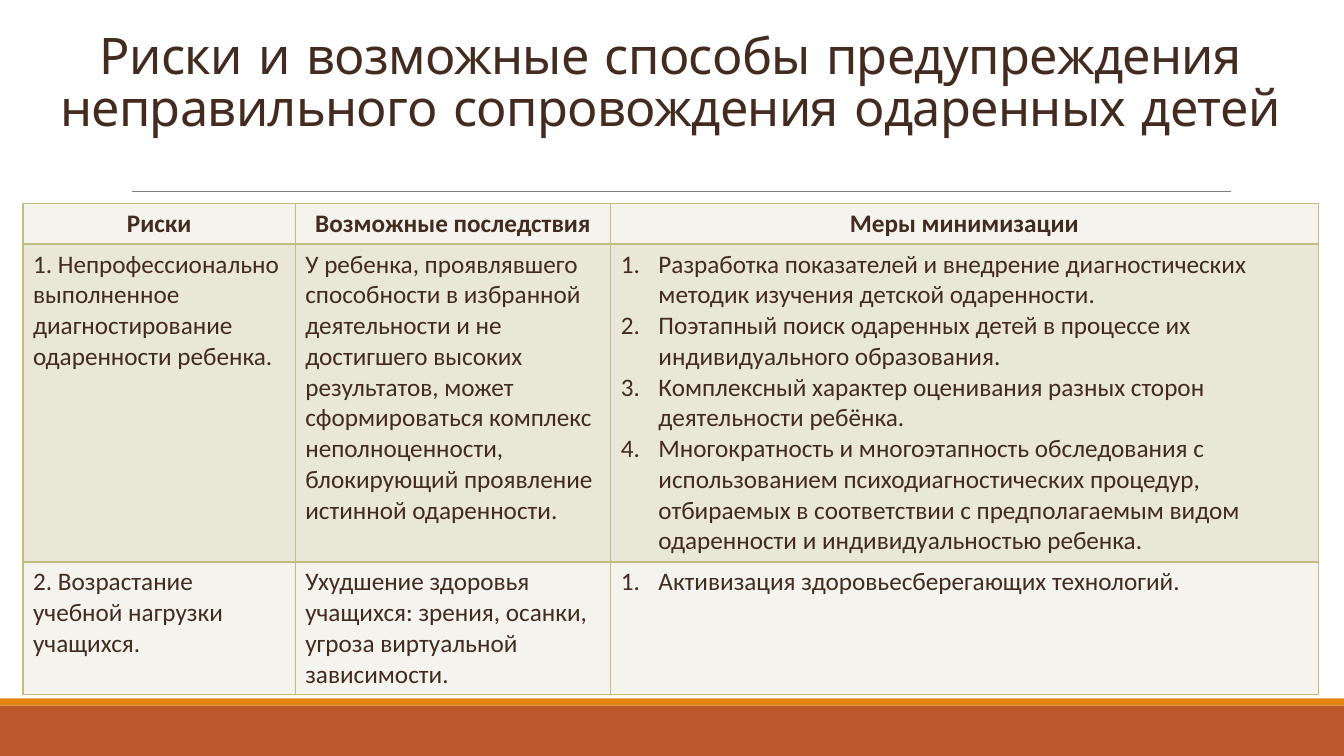
from dataclasses import dataclass

from lxml.etree import SubElement
from pptx import Presentation
from pptx.dml.color import RGBColor as RGB
from pptx.enum.shapes import MSO_CONNECTOR as Connector, MSO_SHAPE as Shape
from pptx.enum.text import MSO_ANCHOR as Anchor, PP_ALIGN as Align
from pptx.oxml.ns import qn
from pptx.util import Cm, Pt


@dataclass(frozen=True)
class Theme:
    """Colours, fonts and type sizes of the slide."""
    ink: str = "432B20"
    rule: str = "808080"
    footer: str = "BD582C"
    footer_edge: str = "E48312"
    border: str = "C2BC80"
    light_row: str = "F4F3ED"
    dark_row: str = "E9E7D8"
    title_font: str = "Comic Neue"
    body_font: str = "Calibri"
    title_size: int = 36
    body_size: int = 18


class SlideBuilder:
    """Draws styled elements on one slide."""

    def __init__(self, slide, theme):
        self.shapes = slide.shapes
        self.theme = theme

    def style_runs(self, paragraph, font, size, bold=False):
        """Apply typeface, size and ink colour to every run."""
        for run in paragraph.runs:
            run.font.name = font
            run.font.size = Pt(size)
            run.font.bold = bold
            run.font.color.rgb = RGB.from_string(self.theme.ink)

    def band(self, top, height, color):
        """Draw a full-width strip."""
        strip = self.shapes.add_shape(Shape.RECTANGLE, 0, Cm(top), Cm(33.87), Cm(height))
        strip.shadow.inherit = False
        strip.fill.solid()
        strip.fill.fore_color.rgb = RGB.from_string(color)
        strip.line.fill.background()

    def rule(self, left, right, top):
        """Draw a thin horizontal line."""
        line = self.shapes.add_connector(Connector.STRAIGHT, Cm(left), Cm(top), Cm(right), Cm(top))
        line.line.color.rgb = RGB.from_string(self.theme.rule)
        line.line.width = Pt(0.5)
        SubElement(line._element.spPr, qn("a:effectLst"))

    def title(self, text, left, top, width, height):
        """Write the centred heading, set from the bottom of its box."""
        frame = self.shapes.add_textbox(Cm(left), Cm(top), Cm(width), Cm(height)).text_frame
        frame.word_wrap = True
        frame.vertical_anchor = Anchor.BOTTOM
        frame.text = text
        heading = frame.paragraphs[0]
        heading.alignment = Align.CENTER
        heading.line_spacing = 0.85
        self.style_runs(heading, self.theme.title_font, self.theme.title_size)
        for run in heading.runs:
            run.font._element.set("spc", "-50")

    def number(self, paragraph):
        """Turn a paragraph into a numbered item with a hanging indent."""
        properties = paragraph._p.get_or_add_pPr()
        properties.set("marL", str(Cm(0.95)))
        properties.set("indent", str(Cm(-0.95)))
        SubElement(properties, qn("a:buFont"), typeface="+mj-lt")
        SubElement(properties, qn("a:buAutoNum"), type="arabicPeriod")

    def cell(self, cell, content, color, header):
        """Fill one cell; a list becomes numbered items."""
        borders = cell._tc.get_or_add_tcPr()
        for side in ("lnL", "lnR", "lnT", "lnB"):
            edge = SubElement(borders, qn(f"a:{side}"), w=str(Pt(1)))
            fill = SubElement(edge, qn("a:solidFill"))
            SubElement(fill, qn("a:srgbClr"), val=self.theme.border)
        cell.fill.solid()
        cell.fill.fore_color.rgb = RGB.from_string(color)
        cell.vertical_anchor = Anchor.MIDDLE if header else Anchor.TOP
        numbered = isinstance(content, list)
        cell.text_frame.text = "\n".join(content) if numbered else content
        for paragraph in cell.text_frame.paragraphs:
            if numbered:
                self.number(paragraph)
            paragraph.alignment = Align.CENTER if header else Align.LEFT
            self.style_runs(paragraph, self.theme.body_font, self.theme.body_size, header)

    def table(self, rows, left, top, widths, heights):
        """Draw the table with alternating row colours."""
        table = self.shapes.add_table(len(rows), len(widths), Cm(left), Cm(top),
                                      Cm(sum(widths)), Cm(sum(heights))).table
        for column, width in zip(table.columns, widths):
            column.width = Cm(width)
        for index, (row, height, contents) in enumerate(zip(table.rows, heights, rows)):
            row.height = Cm(height)
            color = self.theme.dark_row if index % 2 else self.theme.light_row
            for cell, content in zip(row.cells, contents):
                self.cell(cell, content, color, index == 0)


RISKS = [
    ["Риски", "Возможные последствия", "Меры минимизации"],
    [
        "1. Непрофессионально выполненное диагностирование одаренности ребенка.",
        "У ребенка, проявлявшего способности в избранной деятельности и не достигшего "
        "высоких результатов, может сформироваться комплекс неполноценности, "
        "блокирующий проявление истинной одаренности.",
        [
            "Разработка показателей и внедрение диагностических методик изучения "
            "детской одаренности.",
            "Поэтапный поиск одаренных детей в процессе их индивидуального образования.",
            "Комплексный характер оценивания разных сторон деятельности ребёнка.",
            "Многократность и многоэтапность обследования с использованием "
            "психодиагностических процедур, отбираемых в соответствии с предполагаемым "
            "видом одаренности и индивидуальностью ребенка.",
        ],
    ],
    [
        "2. Возрастание учебной нагрузки учащихся.",
        "Ухудшение здоровья учащихся: зрения, осанки, угроза виртуальной зависимости.",
        ["Активизация здоровьесберегающих технологий."],
    ],
]


def main():
    """Build and save the slide."""
    deck = Presentation()
    deck.slide_width, deck.slide_height = Cm(33.87), Cm(19.05)
    theme = Theme()
    builder = SlideBuilder(deck.slides.add_slide(deck.slide_layouts[6]), theme)
    builder.band(17.78, 1.27, theme.footer)
    builder.band(17.6, 0.18, theme.footer_edge)
    builder.rule(3.33, 31.01, 4.83)
    builder.title("Риски и возможные способы предупреждения неправильного сопровождения "
                  "одаренных детей", 0.58, 0.79, 32.64, 2.77)
    builder.table(RISKS, 0.58, 5.13, [6.86, 7.95, 17.83], [1.02, 8.01, 3.35])
    deck.save("out.pptx")


if __name__ == "__main__":
    main()
